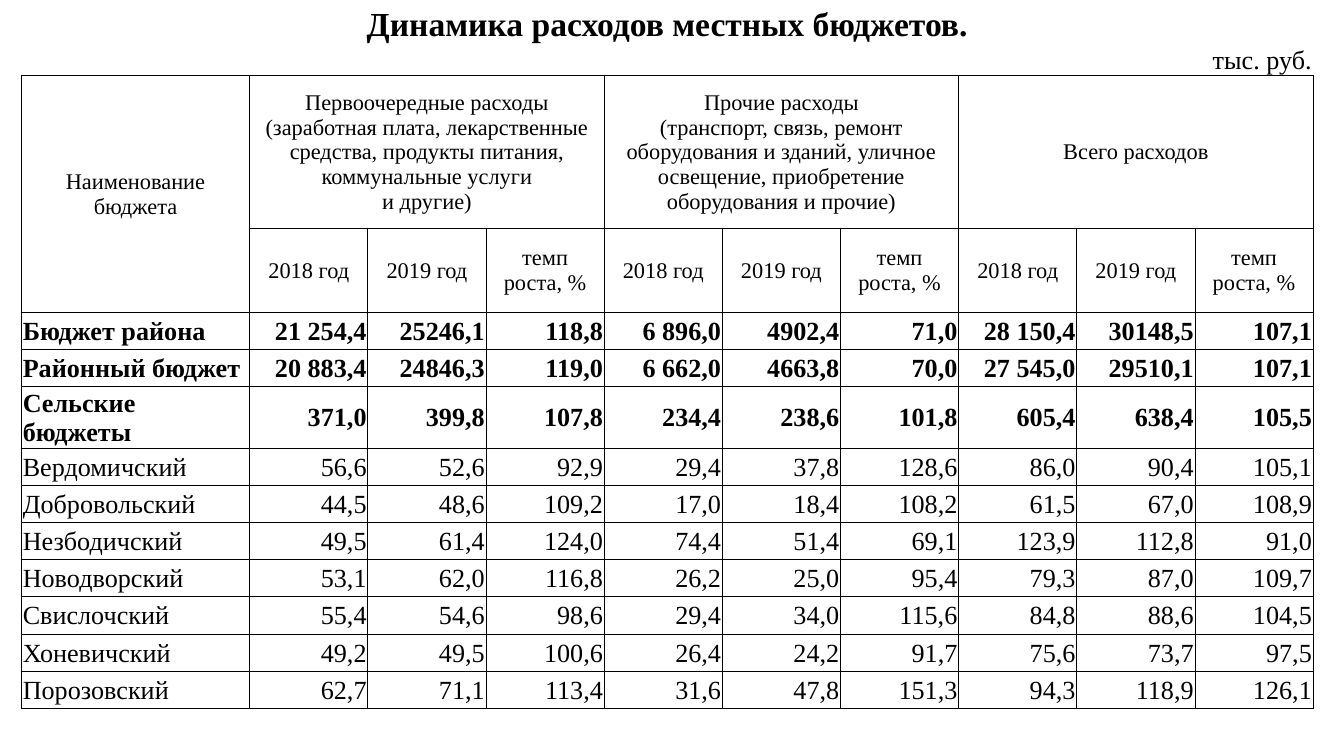
from dataclasses import dataclass

from lxml.etree import SubElement
from pptx import Presentation
from pptx.dml.color import RGBColor
from pptx.enum.text import MSO_VERTICAL_ANCHOR as Anchor, PP_PARAGRAPH_ALIGNMENT as Align
from pptx.oxml.ns import qn
from pptx.util import Pt


@dataclass(frozen=True)
class Theme:
    font: str = "Times New Roman"
    ink: str = "000000"
    title_size: float = 18
    body_size: float = 14
    header_size: float = 12
    border_width: float = 0.5
    inset: float = 0.7


class SlideBuilder:
    def __init__(self, slide, theme):
        self.slide = slide
        self.theme = theme

    def table(self, left, top, widths, heights):
        frame = self.slide.shapes.add_table(
            len(heights), len(widths), Pt(left), Pt(top), Pt(sum(widths)), Pt(sum(heights))
        )
        table = frame.table
        table.first_row = table.horz_banding = False
        for column, width in zip(table.columns, widths):
            column.width = Pt(width)
        for row, height in zip(table.rows, heights):
            row.height = Pt(height)
        return table

    def frame_cell(self, cell, sides):
        inset = Pt(self.theme.inset)
        layout = {
            "margin_left": inset,
            "margin_right": inset,
            "margin_top": inset,
            "margin_bottom": 0,
            "vertical_anchor": Anchor.MIDDLE,
        }
        for name, value in layout.items():
            setattr(cell, name, value)
        properties = cell._tc.get_or_add_tcPr()
        for side in "LRTB":
            line = SubElement(
                properties, qn(f"a:ln{side}"), w=str(Pt(self.theme.border_width))
            )
            if side in sides:
                fill = SubElement(line, qn("a:solidFill"))
                SubElement(fill, qn("a:srgbClr"), val=self.theme.ink)
            else:
                SubElement(line, qn("a:noFill"))
        cell.fill.background()

    def write_cell(self, cell, text, size, align=Align.CENTER, bold=False):
        cell.text_frame.text = text
        style = {"name": self.theme.font, "size": Pt(size), "bold": bold}
        for paragraph in cell.text_frame.paragraphs:
            paragraph.alignment = align
            for run in paragraph.runs:
                for name, value in style.items():
                    setattr(run.font, name, value)
                run.font.color.rgb = RGBColor.from_string(self.theme.ink)

    def empty_cell(self, cell):
        paragraph = cell.text_frame.paragraphs[0]
        SubElement(paragraph._p, qn("a:endParaRPr"), sz=str(self.theme.header_size * 100))


TITLE = "Динамика расходов местных бюджетов."
UNIT = "тыс. руб."
NAME_HEADER = "Наименование бюджета"
GROUPS = [
    "Первоочередные расходы (заработная плата, лекарственные средства, "
    "продукты питания, коммунальные услуги\nи другие)",
    "Прочие расходы\n(транспорт, связь, ремонт оборудования и зданий, уличное "
    "освещение, приобретение оборудования и прочие)",
    "Всего расходов",
]
MEASURES = ["2018 год", "2019 год", "темп\nроста, %"]
BUDGETS = [
    ("Бюджет района", "21 254,4", "25246,1", "118,8", "6 896,0", "4902,4", "71,0", "28 150,4", "30148,5", "107,1"),
    ("Районный бюджет", "20 883,4", "24846,3", "119,0", "6 662,0", "4663,8", "70,0", "27 545,0", "29510,1", "107,1"),
    ("Сельские бюджеты", "371,0", "399,8", "107,8", "234,4", "238,6", "101,8", "605,4", "638,4", "105,5"),
    ("Вердомичский", "56,6", "52,6", "92,9", "29,4", "37,8", "128,6", "86,0", "90,4", "105,1"),
    ("Добровольский", "44,5", "48,6", "109,2", "17,0", "18,4", "108,2", "61,5", "67,0", "108,9"),
    ("Незбодичский", "49,5", "61,4", "124,0", "74,4", "51,4", "69,1", "123,9", "112,8", "91,0"),
    ("Новодворский", "53,1", "62,0", "116,8", "26,2", "25,0", "95,4", "79,3", "87,0", "109,7"),
    ("Свислочский", "55,4", "54,6", "98,6", "29,4", "34,0", "115,6", "84,8", "88,6", "104,5"),
    ("Хоневичский", "49,2", "49,5", "100,6", "26,4", "24,2", "91,7", "75,6", "73,7", "97,5"),
    ("Порозовский", "62,7", "71,1", "113,4", "31,6", "47,8", "151,3", "94,3", "118,9", "126,1"),
]
TOTAL_ROWS = 3
FIRST_BUDGET_ROW = 4
UNIT_ROW_SPANS = (1, 3, 5)


def main():
    presentation = Presentation()
    presentation.slide_width = Pt(720)
    presentation.slide_height = Pt(405)
    theme = Theme()
    slide = presentation.slides.add_slide(presentation.slide_layouts[6])
    builder = SlideBuilder(slide, theme)

    row_height = 19.9
    heights = [21.6, 16.8, 81.8, 45] + [row_height] * len(BUDGETS)
    heights[FIRST_BUDGET_ROW + TOTAL_ROWS - 1] = 33.2
    widths = [122.3] + [63.3] * 9
    table = builder.table(11.5, 2, widths, heights)
    last = len(widths) - 1

    for row in range(len(heights)):
        sides = {0: "", 1: "B"}.get(row, "LRTB")
        for column in range(len(widths)):
            builder.frame_cell(table.cell(row, column), sides)

    table.cell(0, 0).merge(table.cell(0, last))
    for column in UNIT_ROW_SPANS:
        table.cell(1, column).merge(table.cell(1, column + 1))
    table.cell(2, 0).merge(table.cell(3, 0))

    builder.write_cell(table.cell(0, 0), TITLE, theme.title_size, bold=True)
    builder.write_cell(table.cell(1, last), UNIT, theme.body_size, Align.RIGHT)
    for cell in (table.cell(0, 0), table.cell(1, last)):
        cell.vertical_anchor = Anchor.BOTTOM

    builder.write_cell(table.cell(2, 0), NAME_HEADER, theme.header_size)
    for index, group in enumerate(GROUPS):
        start = 1 + index * len(MEASURES)
        table.cell(2, start).merge(table.cell(2, start + len(MEASURES) - 1))
        builder.write_cell(table.cell(2, start), group, theme.header_size)
        for offset, measure in enumerate(MEASURES):
            builder.write_cell(table.cell(3, start + offset), measure, theme.header_size)

    for index, budget in enumerate(BUDGETS):
        for column, text in enumerate(budget):
            builder.write_cell(
                table.cell(FIRST_BUDGET_ROW + index, column),
                text,
                theme.body_size,
                Align.RIGHT if column else Align.LEFT,
                index < TOTAL_ROWS,
            )

    for cell in table.iter_cells():
        if not cell.text_frame.text:
            builder.empty_cell(cell)

    presentation.save("out.pptx")


if __name__ == "__main__":
    main()
